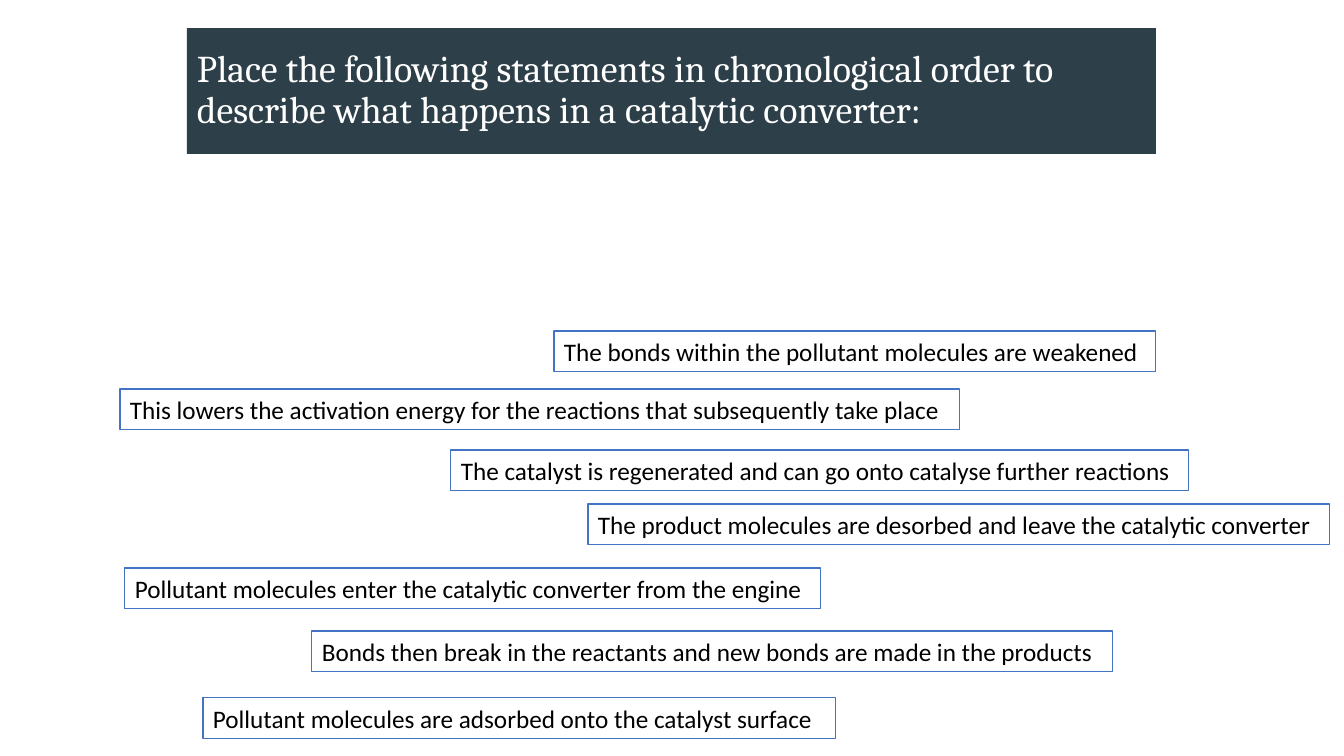
from pptx import Presentation
from pptx.dml.color import RGBColor
from pptx.enum.text import MSO_ANCHOR, MSO_AUTO_SIZE
from pptx.util import Pt

TITLE = ("Place the following statements in chronological order to "
         "describe what happens in a catalytic converter:")
TITLE_BOX = (187, 28, 969, 126)

# left, top, width, text
CARDS = [
    (125, 568, 696, "Pollutant molecules enter the catalytic converter from the engine"),
    (203, 698, 633, "Pollutant molecules are adsorbed onto the catalyst surface"),
    (554, 331, 602, "The bonds within the pollutant molecules are weakened"),
    (120, 389, 840, "This lowers the activation energy for the reactions that subsequently take place"),
    (312, 631, 801, "Bonds then break in the reactants and new bonds are made in the products"),
    (588, 504, 742, "The product molecules are desorbed and leave the catalytic converter"),
    (451, 450, 738, "The catalyst is regenerated and can go onto catalyse further reactions"),
]
CARD_H = 41

SLATE = RGBColor(0x2D, 0x3F, 0x49)
BLUE = RGBColor(0x44, 0x72, 0xC4)
WHITE = RGBColor(0xFF, 0xFF, 0xFF)
BLACK = RGBColor(0, 0, 0)
MIDDLE = MSO_ANCHOR.MIDDLE
GROW = MSO_AUTO_SIZE.SHAPE_TO_FIT_TEXT
PX = 914400 / 100.8


def emu(px):
    return round(px * PX)


def add_text(slide, box, text, font, size, color):
    shape = slide.shapes.add_textbox(*map(emu, box))
    shape.text_frame.text = text
    face = shape.text_frame.paragraphs[0].runs[0].font
    face.name, face.size = font, Pt(size)
    face.color.rgb = color
    return shape


def main():
    deck = Presentation()
    deck.slide_width, deck.slide_height = emu(1344), emu(756)
    slide = deck.slides.add_slide(deck.slide_layouts[6])

    title = add_text(slide, TITLE_BOX, TITLE, "Cambria", 27, WHITE)
    title.fill.solid()
    title.fill.fore_color.rgb = SLATE
    frame = title.text_frame
    frame.word_wrap = True
    frame.vertical_anchor = MIDDLE
    frame.paragraphs[0].line_spacing = 0.9

    for left, top, width, text in CARDS:
        card = add_text(slide, (left, top, width, CARD_H), text, "Calibri", 18, BLACK)
        card.line.color.rgb = BLUE
        card.line.width = Pt(0.75)
        card.text_frame.word_wrap = False
        card.text_frame.auto_size = GROW

    deck.save("out.pptx")


if __name__ == "__main__":
    main()
